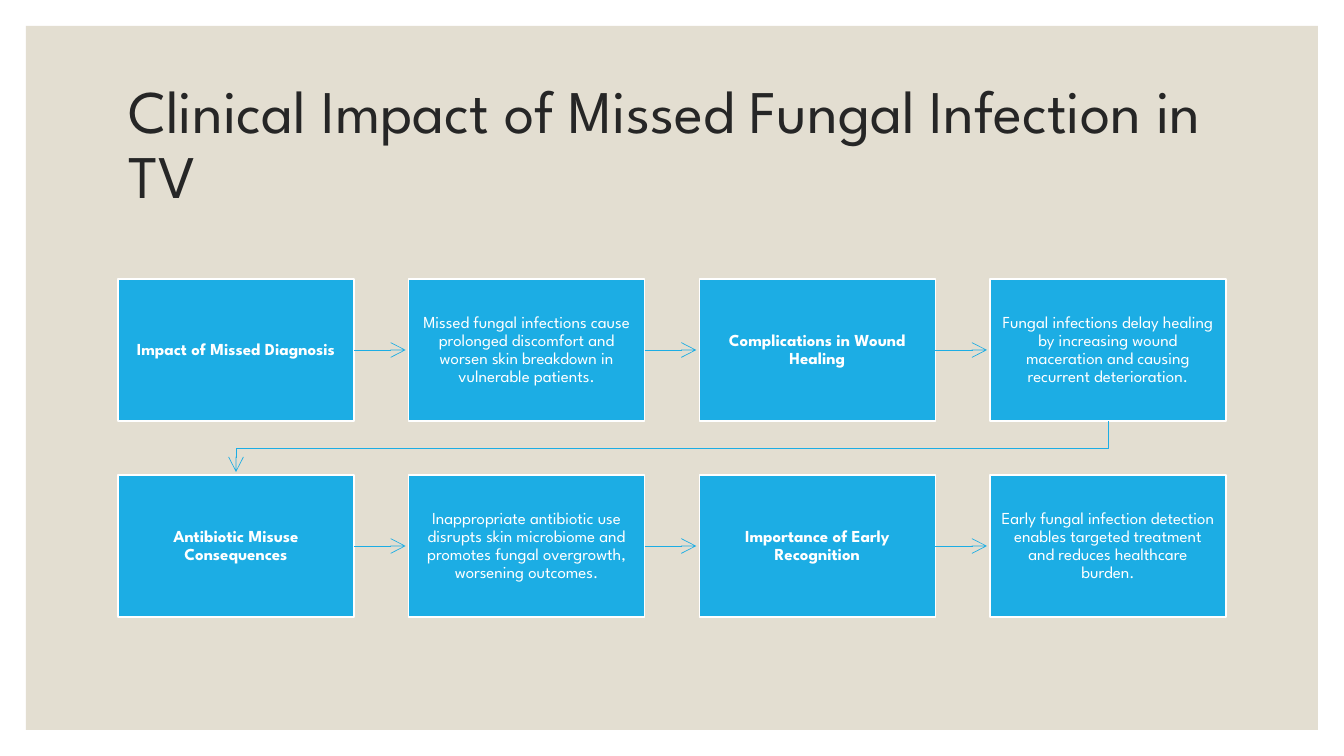
from dataclasses import dataclass

from lxml import etree
from pptx import Presentation
from pptx.dml.color import RGBColor
from pptx.enum.shapes import MSO_CONNECTOR, MSO_SHAPE
from pptx.enum.text import MSO_ANCHOR, MSO_AUTO_SIZE, PP_ALIGN
from pptx.oxml.ns import qn
from pptx.util import Pt

STRAIGHT = MSO_CONNECTOR.STRAIGHT
RECTANGLE = MSO_SHAPE.RECTANGLE
MIDDLE = MSO_ANCHOR.MIDDLE
NO_AUTOFIT = MSO_AUTO_SIZE.NONE
LEFT, CENTER = PP_ALIGN.LEFT, PP_ALIGN.CENTER
TOP_SITE, RIGHT_SITE = 0, 3
EMU_PER_PX = 914400 / 100.8


@dataclass(frozen=True)
class Theme:
    font: str = "League Spartan"
    panel: RGBColor = RGBColor(0xE3, 0xDE, 0xD1)
    accent: RGBColor = RGBColor(0x1C, 0xAD, 0xE4)
    white: RGBColor = RGBColor(0xFF, 0xFF, 0xFF)
    title: RGBColor = RGBColor(0x26, 0x26, 0x26)
    title_size: float = 43.2
    card_size: float = 12
    card_border: float = 1
    arrow_width: float = 0.5
    line_spacing: float = 0.9


THEME = Theme()

TITLE = "Clinical Impact of Missed Fungal Infection in TV"
# Each topic is followed by its explanation
STEPS = [
    ("Impact of Missed Diagnosis",
     "Missed fungal infections cause prolonged discomfort and worsen skin "
     "breakdown in vulnerable patients."),
    ("Complications in Wound Healing",
     "Fungal infections delay healing by increasing wound maceration and "
     "causing recurrent deterioration."),
    ("Antibiotic Misuse Consequences",
     "Inappropriate antibiotic use disrupts skin microbiome and promotes "
     "fungal overgrowth, worsening outcomes."),
    ("Importance of Early Recognition",
     "Early fungal infection detection enables targeted treatment and reduces "
     "healthcare burden."),
]


def px(n):
    return round(n * EMU_PER_PX)


def style_text(tf, text, size, color, align, bold=False):
    tf.word_wrap = True
    tf.auto_size = NO_AUTOFIT
    tf.vertical_anchor = MIDDLE
    tf.text = text
    p = tf.paragraphs[0]
    p.alignment = align
    p.line_spacing = THEME.line_spacing
    font = p.runs[0].font
    font.name, font.size, font.bold = THEME.font, Pt(size), bold
    font.color.rgb = color


def style_arrow(shape):
    shape.line.color.rgb = THEME.accent
    shape.line.width = Pt(THEME.arrow_width)
    ln = shape.line._get_or_add_ln()
    etree.SubElement(ln, qn("a:tailEnd"), type="arrow", w="lg", len="lg")


def add_panel(slide, x, y, w, h):
    s = slide.shapes.add_shape(RECTANGLE, px(x), px(y), px(w), px(h))
    s.shadow.inherit = False
    s.fill.solid()
    s.fill.fore_color.rgb = THEME.panel
    s.line.fill.background()
    # Send the panel behind the title
    slide.shapes._spTree.insert(2, s._element)


def add_title(slide, x, y, w, h):
    s = slide.shapes.title
    s.left, s.top, s.width, s.height = px(x), px(y), px(w), px(h)
    style_text(s.text_frame, TITLE, THEME.title_size, THEME.title, LEFT)


def add_card(slide, text, bold, x, y, w, h):
    s = slide.shapes.add_shape(RECTANGLE, px(x), px(y), px(w), px(h))
    s.shadow.inherit = False
    s.fill.solid()
    s.fill.fore_color.rgb = THEME.accent
    s.line.color.rgb = THEME.white
    s.line.width = Pt(THEME.card_border)
    tf = s.text_frame
    tf.margin_left = tf.margin_right = px(11)
    tf.margin_top = tf.margin_bottom = px(12)
    style_text(tf, text, THEME.card_size, THEME.white, CENTER, bold)
    return s


def add_arrow(slide, card, following, clearance):
    y = card.top + card.height // 2
    c = slide.shapes.add_connector(
        STRAIGHT, card.left + card.width, y, following.left - clearance, y)
    c.begin_connect(card, RIGHT_SITE)
    etree.SubElement(c._element.spPr, qn("a:effectLst"))
    style_arrow(c)


def add_return_arrow(slide, card, following, clearance):
    start_x = card.left + card.width // 2
    end_x = following.left + following.width // 2
    bottom = card.top + card.height
    bend = (bottom + following.top) // 2
    builder = slide.shapes.build_freeform(start_x, bottom)
    builder.add_line_segments(
        [(start_x, bend), (end_x, bend), (end_x, following.top - clearance)],
        close=False)
    s = builder.convert_to_shape()
    s.shadow.inherit = False
    s.fill.background()
    style_arrow(s)


def add_flow(slide, x, y, w, h, columns=4, rows=2, card_w=236, card_h=142):
    pitch_x = (w - card_w) / (columns - 1)
    pitch_y = (h - card_h) / (rows - 1)
    texts = [text for step in STEPS for text in step]
    # Cards: bold topics alternate with explanations
    cards = []
    for i, text in enumerate(texts):
        row, column = divmod(i, columns)
        cards.append(add_card(slide, text, i % 2 == 0, x + column * pitch_x,
                              y + row * pitch_y, card_w, card_h))
    # Arrows: across a row, then back to the start of the next
    for i, (card, following) in enumerate(zip(cards, cards[1:]), start=1):
        draw = add_arrow if i % columns else add_return_arrow
        draw(slide, card, following, px(3))


def main():
    prs = Presentation()
    prs.slide_width, prs.slide_height = px(1344), px(756)
    slide = prs.slides.add_slide(prs.slide_layouts[5])
    add_panel(slide, 26, 26, 1292, 704)
    add_title(slide, 118, 71, 1109, 151)
    add_flow(slide, 118, 279, 1108, 338)
    prs.save("out.pptx")


if __name__ == "__main__":
    main()
